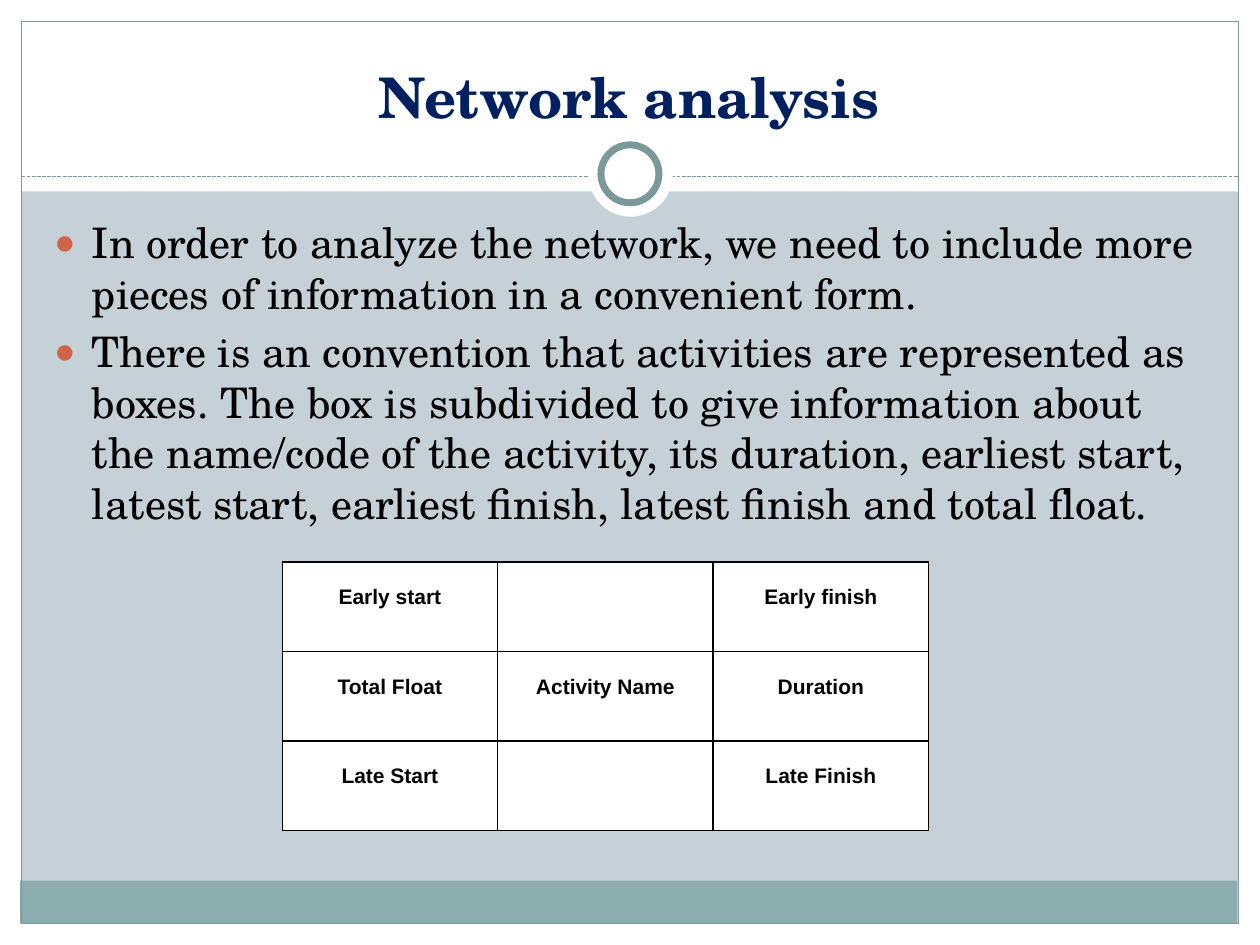
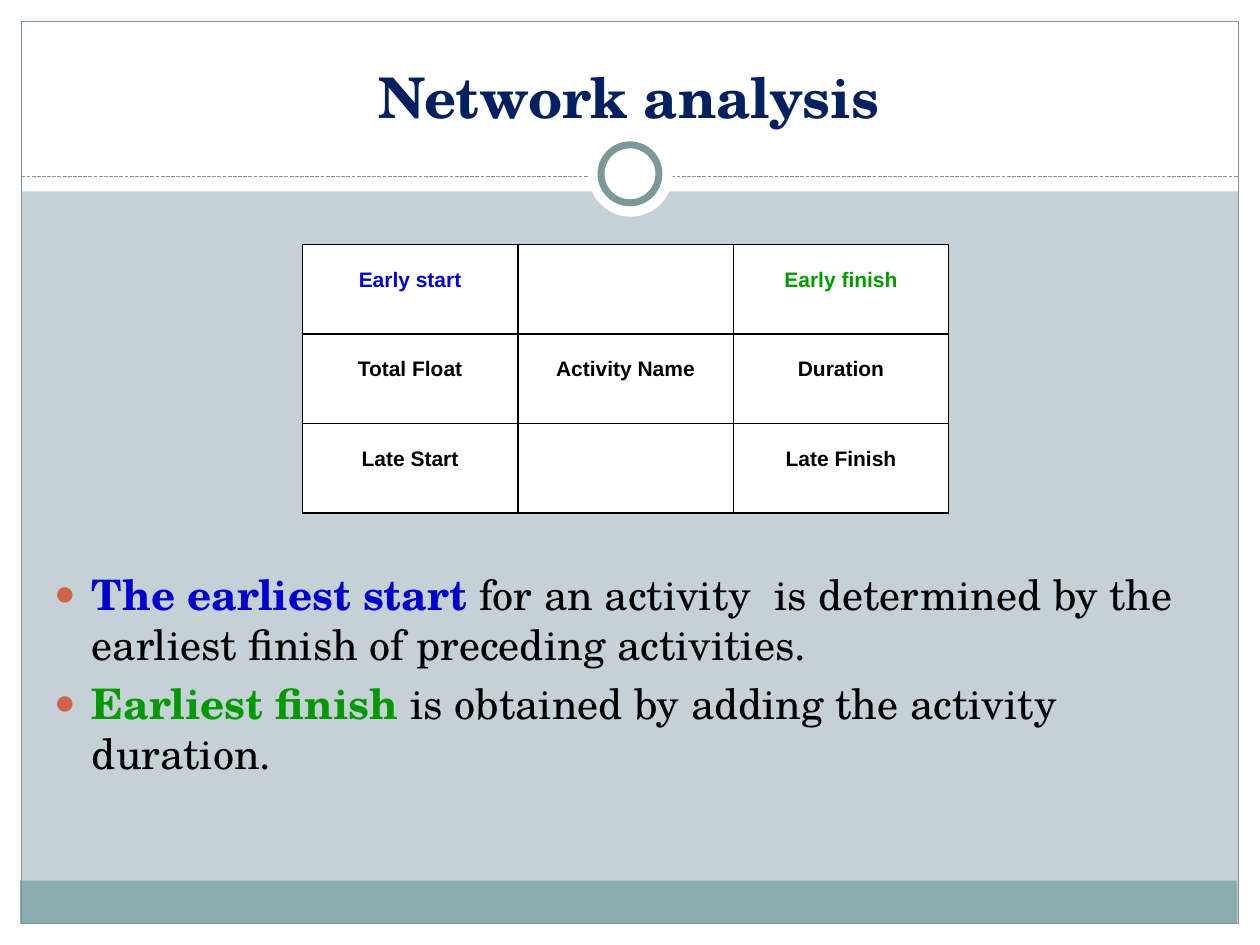
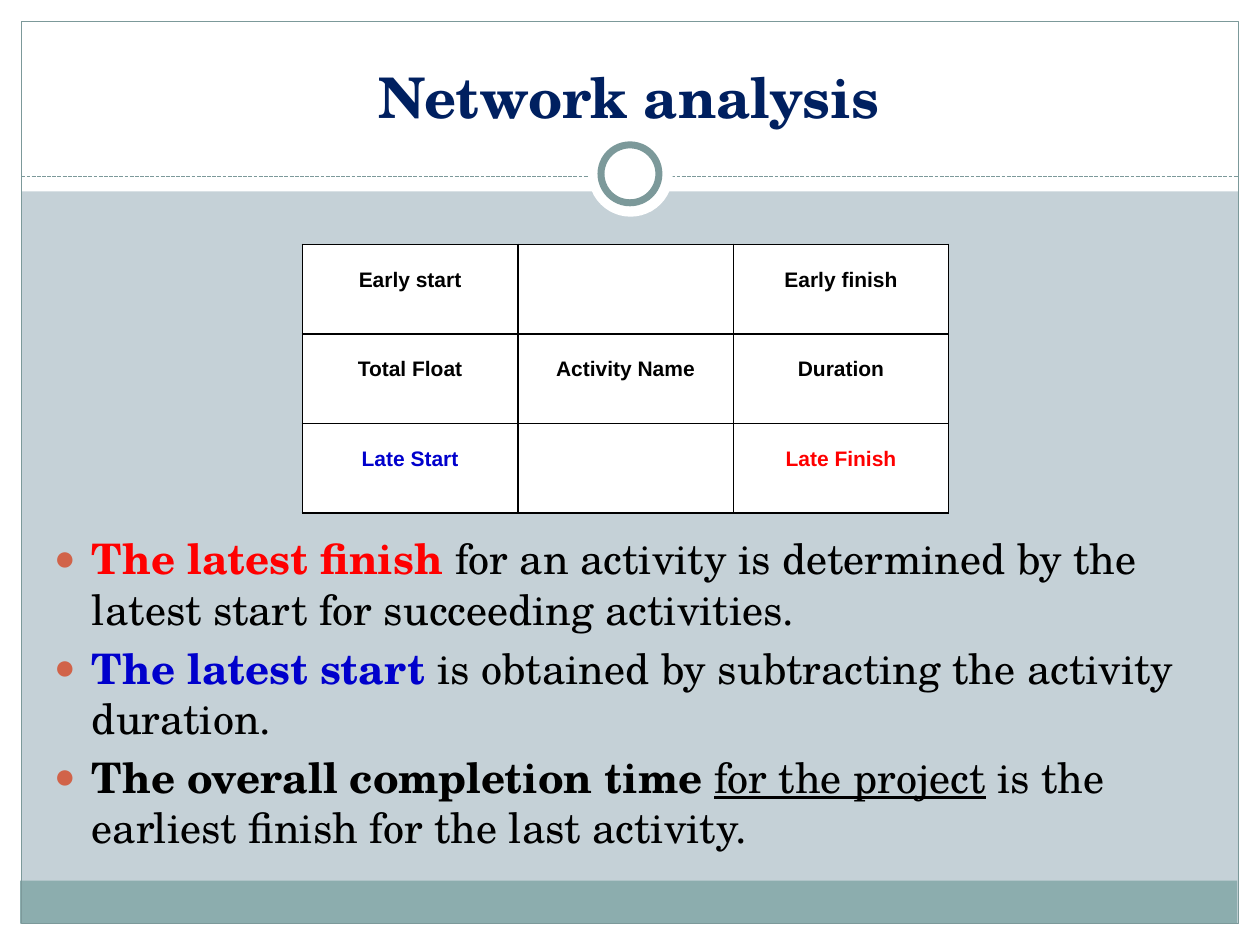
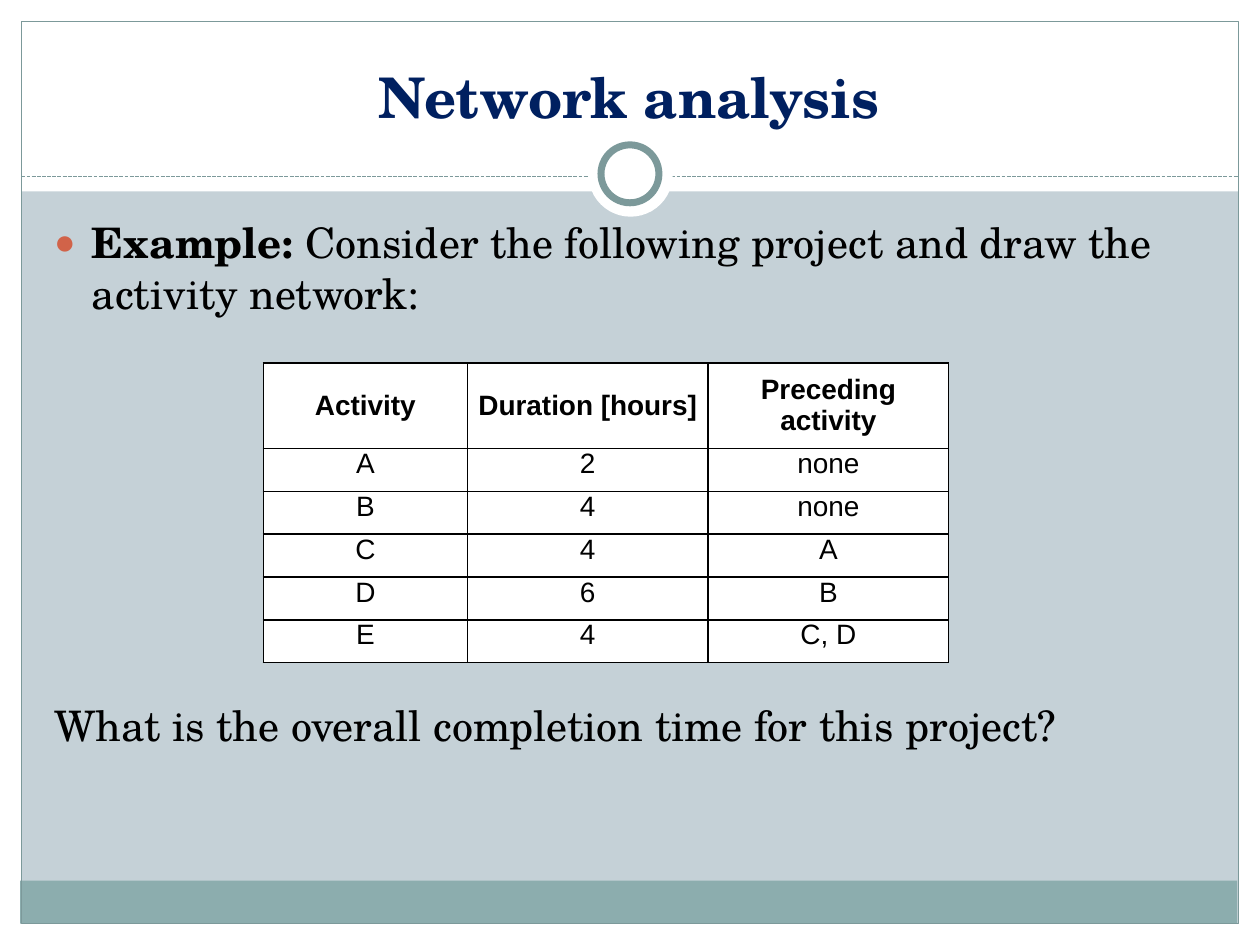
from dataclasses import dataclass

from lxml import etree
from pptx import Presentation
from pptx.dml.color import RGBColor
from pptx.enum.dml import MSO_LINE_DASH_STYLE
from pptx.enum.shapes import MSO_CONNECTOR, MSO_SHAPE
from pptx.enum.text import MSO_ANCHOR, MSO_AUTO_SIZE, PP_ALIGN
from pptx.oxml.ns import qn
from pptx.util import Inches, Pt

RECT, OVAL = MSO_SHAPE.RECTANGLE, MSO_SHAPE.OVAL
STRAIGHT = MSO_CONNECTOR.STRAIGHT
SHORT_DASH = MSO_LINE_DASH_STYLE.SQUARE_DOT
TOP, MIDDLE, BOTTOM = MSO_ANCHOR.TOP, MSO_ANCHOR.MIDDLE, MSO_ANCHOR.BOTTOM
CENTER, LEFT = PP_ALIGN.CENTER, PP_ALIGN.LEFT
NO_FIT = MSO_AUTO_SIZE.NONE


@dataclass(frozen=True)
class Theme:
    background: str = "C5D1D7"
    white: str = "FFFFFF"
    black: str = "000000"
    band: str = "8CADAE"
    frame: str = "7C999A"
    title: str = "002060"
    bullet: str = "D16349"
    blue: str = "0000CC"
    green: str = "009900"
    red: str = "FF0000"
    serif: str = "TeX Gyre Schola"
    sans: str = "Arial"
    title_size: int = 32
    body_size: int = 24
    box_size: int = 12
    table_size: int = 16


theme = Theme()


def add_span(para, text, font, size, color=theme.black, bold=False, underline=False):
    span = para.add_run()
    span.text = text
    span.font.name = font
    span.font.size = Pt(size)
    span.font.color.rgb = RGBColor.from_string(color)
    span.font.bold = bold
    span.font.underline = underline


def add_grid(slide, left, top, widths, heights, rows, size, bold_rows, anchors, inset, colors):
    """Add a white table with black rules; anchors and bold_rows go row by row."""
    grid = slide.shapes.add_table(
        len(rows), len(widths), Inches(left), Inches(top),
        Inches(sum(widths)), Inches(sum(heights))).table
    grid.horz_banding = False
    for column, width in zip(grid.columns, widths):
        column.width = Inches(width)
    for r, (row, height) in enumerate(zip(rows, heights)):
        grid.rows[r].height = Inches(height)
        for c, text in enumerate(row):
            cell = grid.cell(r, c)
            cell.fill.solid()
            cell.fill.fore_color.rgb = RGBColor.from_string(theme.white)
            cell.margin_left = cell.margin_right = Inches(0.05)
            cell.margin_top, cell.margin_bottom = Inches(inset), 0
            cell.vertical_anchor = anchors[r]
            para = cell.text_frame.paragraphs[0]
            para.alignment = CENTER
            if text:
                add_span(para, text, theme.sans, size, colors.get(text, theme.black), bold_rows[r])
            properties = cell._tc.get_or_add_tcPr()
            for position, side in enumerate(("a:lnL", "a:lnR", "a:lnT", "a:lnB")):
                rule = etree.Element(qn(side), w=str(Pt(1)))
                paint = etree.SubElement(rule, qn("a:solidFill"))
                etree.SubElement(paint, qn("a:srgbClr"), val=theme.black)
                properties.insert(position, rule)


deck = Presentation()
deck.slide_width, deck.slide_height = Inches(10), Inches(7.5)
backdrop = deck.slide_master.background.fill
backdrop.solid()
backdrop.fore_color.rgb = RGBColor.from_string(theme.background)

# Shared layout: placeholder places, then the frame behind them
layout = deck.slide_layouts[1]
for index, place, anchor in ((0, (0.33, 0.25, 9.33, 0.83), BOTTOM),
                             (1, (0.33, 1.67, 9.36, 5), TOP)):
    holder = layout.placeholders.get(idx=index)
    holder.left, holder.top, holder.width, holder.height = map(Inches, place)
    holder.text_frame.vertical_anchor = anchor
    holder.text_frame.auto_size = NO_FIT

pages = [deck.slides.add_slide(layout) for _ in range(4)]

# Frame parts are drawn on the first page, then moved to the layout
FRAME = [
    (RECT, (0, 7.33, 10, 0.17), theme.white, 0),
    (RECT, (0, 0, 10, 1.52), theme.white, 0),
    (RECT, (0, 0, 0.17, 7.5), theme.white, 0),
    (RECT, (9.83, 0, 0.17, 7.5), theme.white, 0),
    (RECT, (0.16, 6.99, 9.66, 0.34), theme.band, 0),
    (RECT, (0.17, 0.17, 9.66, 7.16), None, 0.75),
    (STRAIGHT, (0.17, 1.4, 9.83, 1.4), None, 0.75),
    (OVAL, (4.67, 1.05, 0.67, 0.67), theme.white, 0),
    (OVAL, (4.77, 1.15, 0.46, 0.46), theme.white, 4),
]
for number, (kind, place, fill, weight) in enumerate(FRAME):
    if kind is STRAIGHT:
        part = pages[0].shapes.add_connector(kind, *map(Inches, place))
        part.line.dash_style = SHORT_DASH
        etree.SubElement(part.element.spPr, qn("a:effectLst"))
    else:
        part = pages[0].shapes.add_shape(kind, *map(Inches, place))
        part.shadow.inherit = False
        if fill:
            part.fill.solid()
            part.fill.fore_color.rgb = RGBColor.from_string(fill)
        else:
            part.fill.background()
    if weight:
        part.line.color.rgb = RGBColor.from_string(theme.frame)
        part.line.width = Pt(weight)
    else:
        part.line.fill.background()
    part.element.xpath("./*/p:cNvPr")[0].set("id", str(100 + number))
    layout.shapes.element.insert(2 + number, part.element)

# Body text: top inset, then paragraphs of (bulleted, space before, spans)
GAP = 4.8
BODIES = [
    (0.05, [
        (True, GAP, [("In order to analyze the network, we need to include more pieces of "
                      "information in a convenient form.",)]),
        (True, GAP, [("There is an convention that activities are represented as boxes. The box "
                      "is subdivided to give information about the name/code of the activity, "
                      "its duration, earliest start, latest start, earliest finish, latest "
                      "finish and total float.",)]),
    ]),
    (2.84, [
        (True, GAP, [("The earliest start ", theme.blue, True),
                     ("for an activity  is determined by the earliest finish of preceding "
                      "activities.",)]),
        (True, GAP, [("Earliest finish ", theme.green, True),
                     ("is obtained by adding the activity duration.",)]),
    ]),
    (2.56, [
        (True, GAP, [("The latest finish ", theme.red, True),
                     ("for an activity is determined by the latest start for succeeding "
                      "activities.",)]),
        (True, GAP, [("The latest start ", theme.blue, True),
                     ("is obtained by subtracting the activity duration.",)]),
        (True, GAP, [("The overall completion time ", theme.black, True),
                     ("for the project", theme.black, False, True),
                     (" is the earliest finish for the last activity.",)]),
    ]),
    (0.05, [
        (True, GAP, [("Example: ", theme.black, True),
                     ("Consider the following project and draw the activity network:",)]),
        (False, 218.5, [("What is the overall completion time for this project?",)]),
    ]),
]
for page, (inset, paragraphs) in zip(pages, BODIES):
    heading = page.shapes.title.text_frame.paragraphs[0]
    heading.alignment = CENTER
    add_span(heading, "Network analysis", theme.serif, theme.title_size, theme.title, True)

    body = page.placeholders[1].text_frame
    body.margin_top = Inches(inset)
    for number, (bulleted, space, spans) in enumerate(paragraphs):
        para = body.add_paragraph() if number else body.paragraphs[0]
        para.alignment = LEFT
        para.space_before = Pt(space)
        properties = para._p.get_or_add_pPr()
        indent = Inches(0.3) if bulleted else 0
        properties.set("marL", str(indent))
        properties.set("indent", str(-indent))
        if bulleted:
            tint = etree.SubElement(properties, qn("a:buClr"))
            etree.SubElement(tint, qn("a:srgbClr"), val=theme.bullet)
            etree.SubElement(properties, qn("a:buSzPct"), val="85000")
            etree.SubElement(properties, qn("a:buChar"), char="●")
        else:
            etree.SubElement(properties, qn("a:buNone"))
        for text, *style in spans:
            add_span(para, text, theme.serif, theme.body_size, *style)

# Activity box on the first three pages
ACTIVITY_BOX = [
    ("Early start", "", "Early finish"),
    ("Total Float", "Activity Name", "Duration"),
    ("Late Start", "", "Late Finish"),
]
BOX_PLACES = [
    (2.24, 4.46, {}),
    (2.4, 1.94, {"Early start": theme.blue, "Early finish": theme.green}),
    (2.4, 1.94, {"Late Start": theme.blue, "Late Finish": theme.red}),
]
for page, (left, top, colors) in zip(pages, BOX_PLACES):
    add_grid(page, left, top, [1.71] * 3, [0.71] * 3, ACTIVITY_BOX, theme.box_size,
             [True] * 3, [TOP] * 3, 0.19, colors)

# Example project on the last page
PROJECT = [
    ("Activity", "Duration [hours]", "Preceding activity"),
    ("A", "2", "none"),
    ("B", "4", "none"),
    ("C", "4", "A"),
    ("D", "6", "B"),
    ("E", "4", "C, D"),
]
add_grid(pages[3], 2.09, 2.88, [1.62, 1.91, 1.91], [0.68] + [0.34] * 5, PROJECT,
         theme.table_size, [True] + [False] * 5, [MIDDLE] + [TOP] * 5, 0, {})

deck.save("out.pptx")
